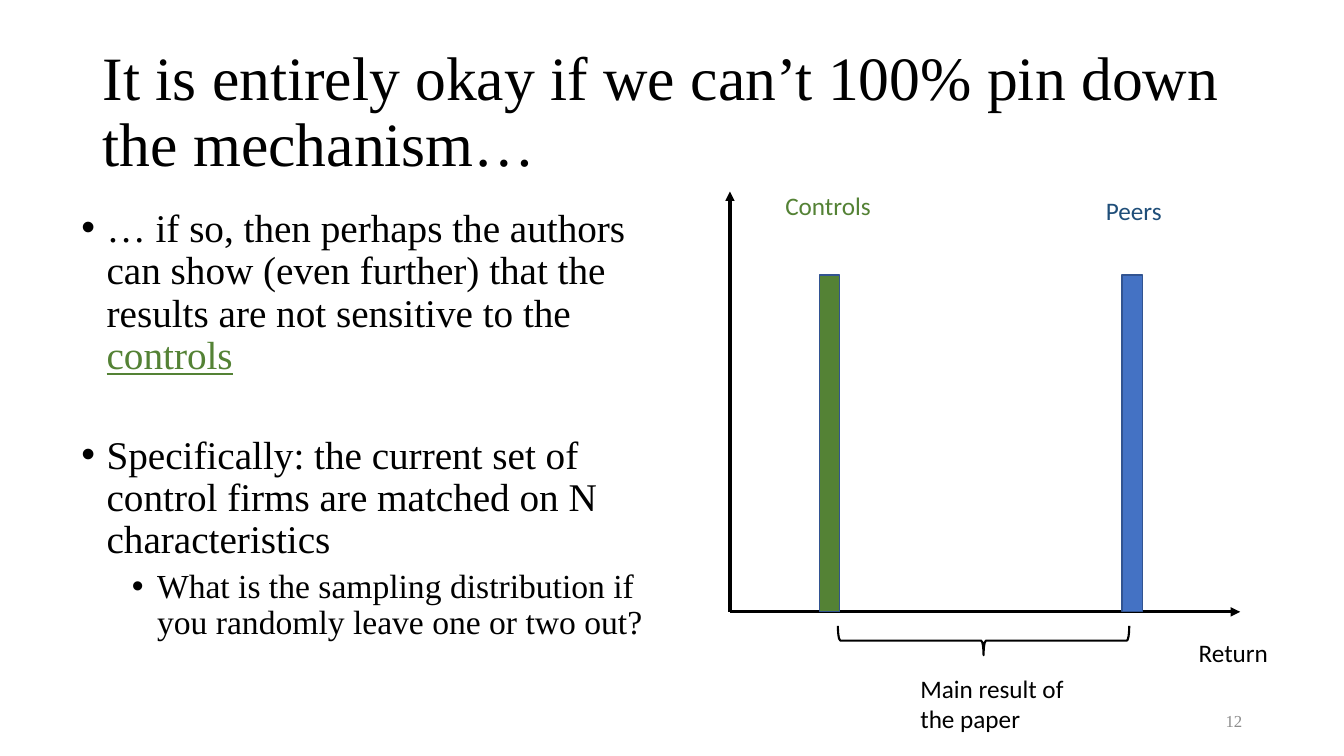
from dataclasses import dataclass
from typing import Optional

from lxml.etree import SubElement
from pptx import Presentation
from pptx.dml.color import RGBColor
from pptx.enum.shapes import MSO_CONNECTOR as Connector, MSO_SHAPE as Shape
from pptx.enum.text import MSO_ANCHOR as Anchor, PP_ALIGN as Align
from pptx.oxml.ns import qn
from pptx.util import Pt

PX = 9144  # EMU per px, 100 px to the inch
SERIF, SANS = "Times New Roman", "Calibri"
COLORS = {
    "ink": "000000",
    "control": "548235",
    "peer": "4472C4",
    "peer_label": "1F4E79",
    "bar_edge": "325491",
    "page_number": "8C8C8C",
}
ORIGIN_X, ORIGIN_Y = 724, 607
BAR_TOP, BAR_WIDTH = 273, 20


@dataclass(frozen=True)
class Box:
    left: int
    top: int
    width: int
    height: int

    def emu(self) -> tuple[int, ...]:
        return tuple(side * PX for side in (self.left, self.top, self.width, self.height))


@dataclass(frozen=True)
class Span:
    text: str
    color: str = "ink"
    underline: bool = False


@dataclass(frozen=True)
class Para:
    spans: tuple[Span, ...]
    size: int = 18
    font: str = SANS
    before: int = 0
    line_spacing: Optional[float] = None
    indent: Optional[int] = None
    align: Align = Align.LEFT


@dataclass(frozen=True)
class TextItem:
    box: Box
    paras: tuple[Para, ...]
    anchor: Anchor = Anchor.TOP


@dataclass(frozen=True)
class Bar:
    left: int
    color: str


@dataclass(frozen=True)
class Axis:
    end_x: int
    end_y: int


def label(box: Box, text: str, color: str = "ink") -> TextItem:
    return TextItem(box, (Para((Span(text, color),)),))


def bullet(*spans: Span, size: int = 28, before: int = 10, indent: int = 25) -> Para:
    return Para(spans, size, SERIF, before, 0.9, indent)


TEXTS = (
    TextItem(
        Box(92, 40, 1150, 145),
        (Para((Span("It is entirely okay if we can’t 100% pin down the mechanism…"),),
              44, SERIF, line_spacing=0.9),),
        Anchor.MIDDLE,
    ),
    TextItem(
        Box(71, 202, 580, 476),
        (
            bullet(
                Span("… if so, then perhaps the authors can show (even further) "
                     "that the results are not sensitive to the "),
                Span("controls", "control", True),
            ),
            bullet(
                Span("Specifically: the current set of control firms are matched "
                     "on N characteristics"),
                before=41,
            ),
            bullet(
                Span("What is the sampling distribution if you randomly leave "
                     "one or two out?"),
                size=24, before=5, indent=75,
            ),
        ),
    ),
    TextItem(
        Box(942, 695, 300, 40),
        (Para((Span("12", "page_number"),), 12, SERIF, align=Align.RIGHT),),
        Anchor.MIDDLE,
    ),
    label(Box(1179, 627, 99, 40), "Return"),
    label(Box(1087, 189, 91, 40), "Peers", "peer_label"),
    label(Box(769, 184, 110, 40), "Controls", "control"),
    label(Box(903, 663, 200, 71), "Main result of the paper"),
)
AXES = (Axis(1230, ORIGIN_Y), Axis(ORIGIN_X, 190))
BARS = (Bar(1113, "peer"), Bar(813, "control"))


def rgb(name: str) -> RGBColor:
    return RGBColor.from_string(COLORS[name])


def add_text(page, item: TextItem) -> None:
    frame = page.shapes.add_textbox(*item.box.emu()).text_frame
    frame.word_wrap = True
    frame.vertical_anchor = item.anchor
    for index, para in enumerate(item.paras):
        paragraph = frame.add_paragraph() if index else frame.paragraphs[0]
        paragraph.alignment = para.align
        paragraph.space_before = Pt(para.before)
        if para.line_spacing is not None:
            paragraph.line_spacing = para.line_spacing
        if para.indent is not None:
            add_bullet(paragraph, para.indent)
        for span in para.spans:
            run = paragraph.add_run()
            run.text = span.text
            run.font.name = para.font
            run.font.size = Pt(para.size)
            run.font.color.rgb = rgb(span.color)
            run.font.underline = span.underline


def add_bullet(paragraph, indent: int) -> None:
    """Hang the paragraph 25 px behind a round bullet."""
    properties = paragraph._p.get_or_add_pPr()
    properties.set("marL", str(indent * PX))
    properties.set("indent", str(-25 * PX))
    SubElement(properties, qn("a:buFont"), typeface="Arial")
    SubElement(properties, qn("a:buChar"), char="•")


def add_axis(page, axis: Axis) -> None:
    ends = (ORIGIN_X, ORIGIN_Y, axis.end_x, axis.end_y)
    line = page.shapes.add_connector(Connector.STRAIGHT, *(end * PX for end in ends))
    line.line.color.rgb = rgb("ink")
    line.line.width = Pt(2.25)
    SubElement(line.line._get_or_add_ln(), qn("a:tailEnd"), type="triangle")
    SubElement(line._element.spPr, qn("a:effectLst"))


def add_bar(page, bar: Bar) -> None:
    box = Box(bar.left, BAR_TOP, BAR_WIDTH, ORIGIN_Y - BAR_TOP)
    shape = page.shapes.add_shape(Shape.RECTANGLE, *box.emu())
    shape.shadow.inherit = False
    shape.fill.solid()
    shape.fill.fore_color.rgb = rgb(bar.color)
    shape.line.color.rgb = rgb("bar_edge")
    shape.line.width = Pt(1)


def add_brace(page, box: Box) -> None:
    """Draw a brace that opens upwards; the box is the one before rotation."""
    brace = page.shapes.add_shape(Shape.RIGHT_BRACE, *box.emu())
    brace.rotation = 90
    brace.shadow.inherit = False
    brace.fill.background()
    brace.line.color.rgb = rgb("ink")
    brace.line.width = Pt(1.5)


def main() -> None:
    deck = Presentation()
    deck.slide_width, deck.slide_height = 1333 * PX, 750 * PX
    page = deck.slides.add_slide(deck.slide_layouts[6])
    for axis in AXES:
        add_axis(page, axis)
    for bar in BARS:
        add_bar(page, bar)
    add_brace(page, Box(961, 491, 29, 289))
    for item in TEXTS:
        add_text(page, item)
    deck.save("out.pptx")


if __name__ == "__main__":
    main()
